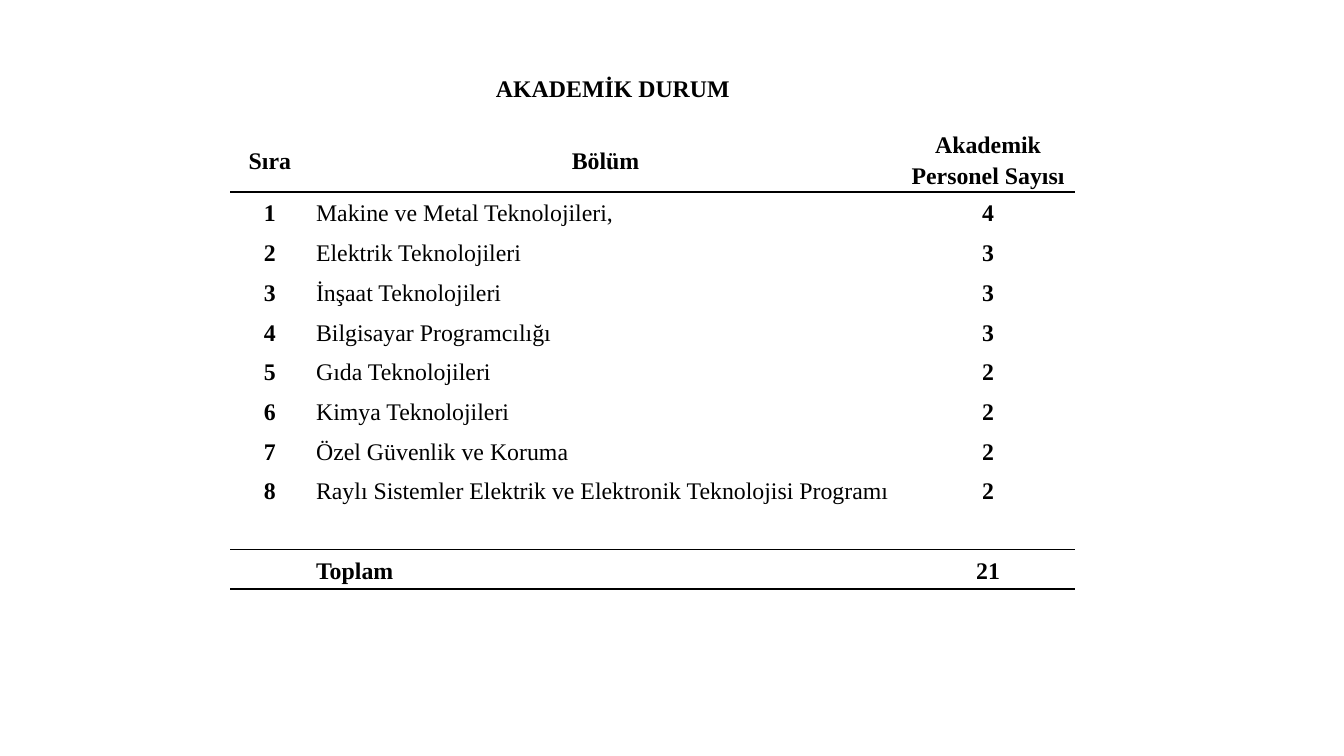
from dataclasses import dataclass

from lxml.etree import SubElement
from pptx import Presentation
from pptx.dml.color import RGBColor
from pptx.enum.text import MSO_ANCHOR as Anchor, PP_ALIGN as Align
from pptx.oxml.ns import qn
from pptx.slide import Slide
from pptx.table import Table, _Cell as Cell
from pptx.text.text import _Paragraph as Paragraph
from pptx.util import Pt


@dataclass(frozen=True)
class Theme:
    font: str = "Times New Roman"
    size: float = 17
    ink: str = "000000"
    rule_width: float = 1
    line_spacing: float = 1.15
    cell_inset: float = 4.5


@dataclass(frozen=True)
class Column:
    width: float
    align: Align
    bold: bool


@dataclass(frozen=True)
class Department:
    name: str
    staff: int


THEME = Theme()
COLUMNS = [
    Column(57, Align.CENTER, True),
    Column(422.6, Align.LEFT, False),
    Column(123.9, Align.CENTER, True),
]
HEADINGS = ("Sıra", "Bölüm", "Akademik Personel Sayısı")
DEPARTMENTS = [
    Department("Makine ve Metal Teknolojileri,", 4),
    Department("Elektrik Teknolojileri", 3),
    Department("İnşaat Teknolojileri", 3),
    Department("Bilgisayar Programcılığı", 3),
    Department("Gıda Teknolojileri", 2),
    Department("Kimya Teknolojileri", 2),
    Department("Özel Güvenlik ve Koruma", 2),
    Department("Raylı Sistemler Elektrik ve Elektronik Teknolojisi Programı", 2),
]
TABLE_LEFT, TABLE_TOP = 164.3, 90
HEADING_HEIGHT, ROW_HEIGHT = 47.2, 28.35


def write(paragraph: Paragraph, text: str, align: Align, bold: bool) -> None:
    paragraph.text = text
    paragraph.alignment = align
    for run in paragraph.runs:
        run.font.name = THEME.font
        run.font.size = Pt(THEME.size)
        run.font.bold = bold
        run.font.color.rgb = RGBColor.from_string(THEME.ink)


def set_borders(cell: Cell, above: bool, below: bool) -> None:
    """Rule the top and bottom edges as asked and clear the other edges."""
    properties = cell._tc.get_or_add_tcPr()
    edges = {"a:lnL": False, "a:lnR": False, "a:lnT": above, "a:lnB": below}
    for tag, ruled in edges.items():
        line = SubElement(properties, qn(tag), w=str(Pt(THEME.rule_width)))
        if ruled:
            fill = SubElement(line, qn("a:solidFill"))
            SubElement(fill, qn("a:srgbClr"), val=THEME.ink)
        else:
            SubElement(line, qn("a:noFill"))


def fill_cell(cell: Cell, text: str, align: Align, bold: bool) -> None:
    cell.fill.background()
    cell.vertical_anchor = Anchor.MIDDLE
    cell.margin_left = cell.margin_right = Pt(THEME.cell_inset)
    cell.margin_top = cell.margin_bottom = Pt(0)
    paragraph = cell.text_frame.paragraphs[0]
    write(paragraph, text, align, bold)
    paragraph.line_spacing = THEME.line_spacing


def add_title(slide: Slide) -> None:
    box = slide.shapes.add_textbox(Pt(139.7), Pt(49), Pt(532.8), Pt(28))
    frame = box.text_frame
    frame.word_wrap = True
    frame.margin_left = Pt(70.5)
    write(frame.paragraphs[0], "AKADEMİK DURUM", Align.CENTER, True)


def size_table(table: Table) -> None:
    for table_column, column in zip(table.columns, COLUMNS):
        table_column.width = Pt(column.width)
    for index, row in enumerate(table.rows):
        row.height = Pt(ROW_HEIGHT if index else HEADING_HEIGHT)


def add_staff_table(slide: Slide) -> None:
    total = sum(department.staff for department in DEPARTMENTS)
    rows = [
        HEADINGS,
        *((str(number), department.name, str(department.staff))
          for number, department in enumerate(DEPARTMENTS, 1)),
        ("", "", ""),
        ("", "Toplam", str(total)),
    ]
    last = len(rows) - 1
    ruled_below = {0, last - 1, last}
    width = sum(column.width for column in COLUMNS)
    height = HEADING_HEIGHT + last * ROW_HEIGHT
    table = slide.shapes.add_table(
        len(rows), len(COLUMNS),
        Pt(TABLE_LEFT), Pt(TABLE_TOP), Pt(width), Pt(height),
    ).table
    table.first_row = table.horz_banding = False
    size_table(table)
    for row_index, row in enumerate(rows):
        for column_index, column in enumerate(COLUMNS):
            cell = table.cell(row_index, column_index)
            set_borders(cell, row_index - 1 in ruled_below, row_index in ruled_below)
            align = Align.CENTER if row_index == 0 else column.align
            bold = column.bold or row_index in (0, last)
            fill_cell(cell, row[column_index], align, bold)


def main() -> None:
    presentation = Presentation()
    presentation.slide_width, presentation.slide_height = Pt(960), Pt(540)
    slide = presentation.slides.add_slide(presentation.slide_layouts[6])
    add_title(slide)
    add_staff_table(slide)
    presentation.save("out.pptx")


if __name__ == "__main__":
    main()
